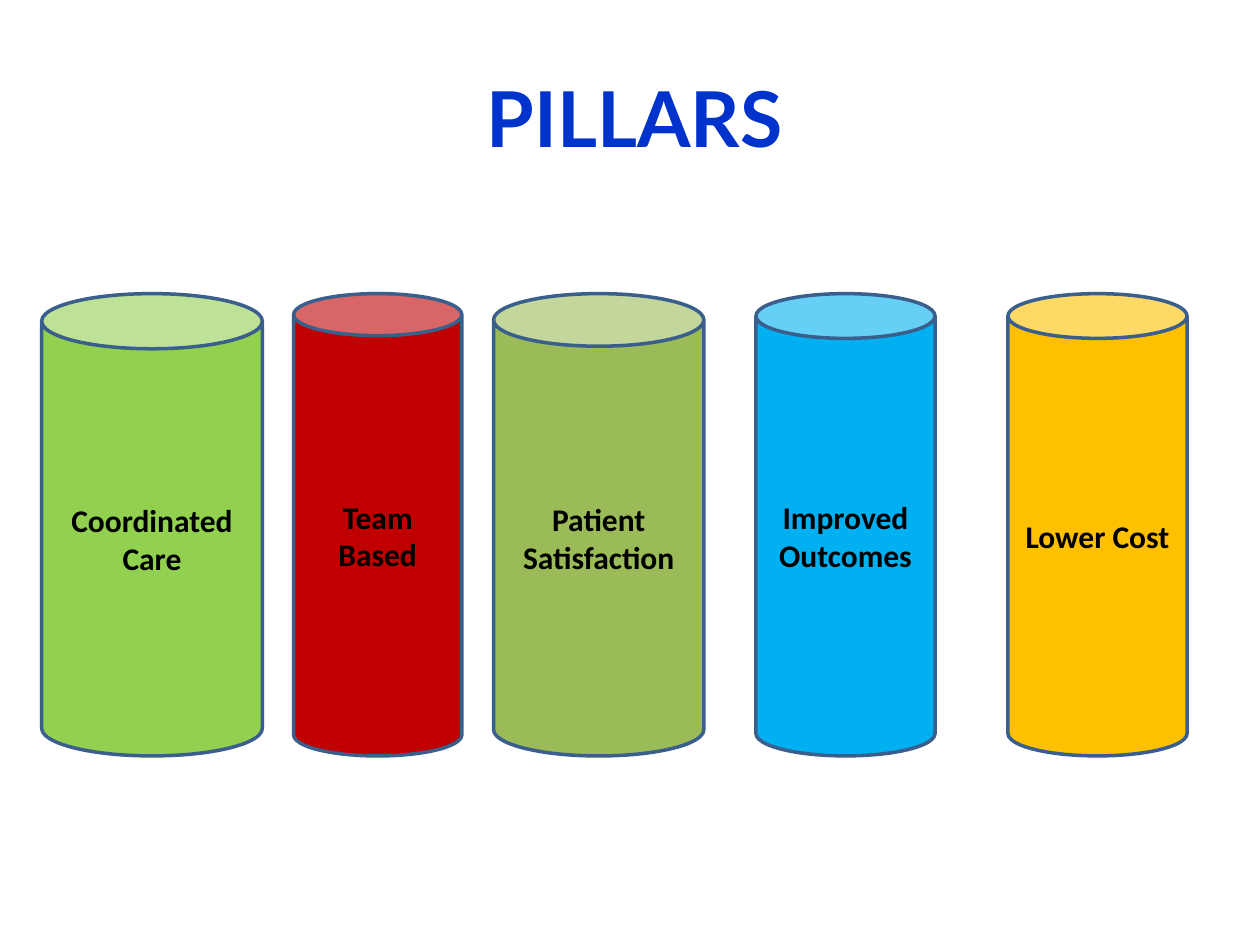
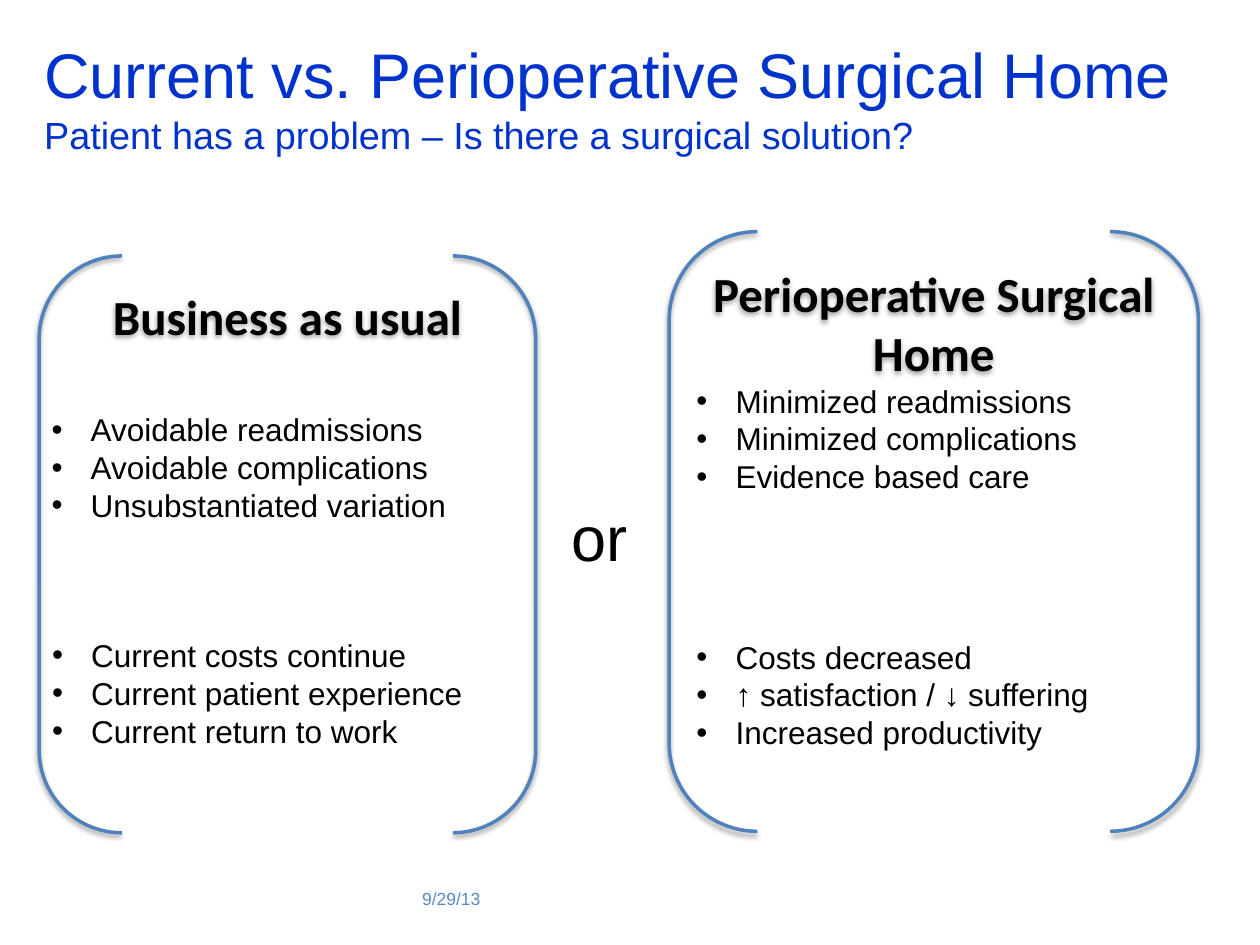
import pptx
import pptx.util
import pptx.dml.color
import pptx.enum.shapes
import pptx.enum.text
import pptx.oxml.ns
from dataclasses import dataclass
from lxml import etree

Cm = pptx.util.Cm
Pt = pptx.util.Pt
Align = pptx.enum.text.PP_ALIGN
Anchor = pptx.enum.text.MSO_ANCHOR
Preset = pptx.enum.shapes.MSO_SHAPE

PILLAR_TITLE = "PILLARS"
PILLAR_TOP, PILLAR_HEIGHT = 5.92, 9.32
PILLARS = [
    ("Coordinated Care", 0.84, 4.45, "92D050"),
    ("Team Based", 5.92, 3.39, "C00000"),
    ("Patient Satisfaction", 9.95, 4.24, "9BBB59"),
    ("Improved Outcomes", 15.24, 3.61, "00B0F0"),
    ("Lower Cost", 20.32, 3.61, "FFC000"),
]

COMPARISON_TITLE = "Current vs. Perioperative Surgical Home"
COMPARISON_SUBTITLE = "Patient has a problem – Is there a surgical solution?"
CHOICE_WORD = "or"
DATE = "9/29/13"
OPTIONS = [
    {
        "heading": "Business as usual",
        "bracket": (0.79, 5.16, 10.01, 11.63),
        "lists": [
            ((0.79, 8.15, 9.8, 2.57),
             ["Avoidable readmissions", "Avoidable complications", "Unsubstantiated variation"]),
            ((0.8, 12.7, 9.8, 2.57),
             ["Current costs continue", "Current patient experience", "Current return to work"]),
        ],
    },
    {
        "heading": "Perioperative Surgical Home",
        "bracket": (13.49, 4.67, 10.67, 12.09),
        "lists": [
            ((13.79, 7.57, 10.36, 2.57),
             ["Minimized readmissions", "Minimized complications", "Evidence based care"]),
            ((13.79, 12.73, 10.36, 2.57),
             ["Costs decreased", "↑ satisfaction / ↓ suffering", "Increased productivity"]),
        ],
    },
]


@dataclass(frozen=True)
class Theme:
    title: str = "0033CC"
    text: str = "000000"
    date: str = "5A87C5"
    pillar_line: str = "3A5F8C"
    bracket_line: str = "4F81BD"
    display_font: str = "Lato"
    shape_font: str = "Calibri"
    body_font: str = "Arial"
    pillar_title_size: float = 44
    title_size: float = 36
    subtitle_size: float = 21.6
    heading_size: float = 28
    body_size: float = 18
    date_size: float = 10
    line_width: float = 2


THEME = Theme()


def rgb(value):
    return pptx.dml.color.RGBColor.from_string(value)


def style(para, size, color, font, bold=False, align=Align.LEFT):
    para.alignment = align
    for span in para.runs:
        span.font.size = Pt(size)
        span.font.name = font
        span.font.bold = bold
        span.font.color.rgb = rgb(color)


def add_text(page, place, lines, anchor=Anchor.TOP, wrap=True):
    box = page.shapes.add_textbox(*map(Cm, place))
    frame = box.text_frame
    frame.word_wrap = wrap
    frame.vertical_anchor = anchor
    frame.text = "\n".join(lines)
    return frame.paragraphs


def add_outlined(page, preset, place, line, label, size, anchor):
    shape = page.shapes.add_shape(preset, *map(Cm, place))
    shape.shadow.inherit = False
    shape.line.color.rgb = rgb(line)
    shape.line.width = Pt(THEME.line_width)
    frame = shape.text_frame
    frame.word_wrap = True
    frame.vertical_anchor = anchor
    frame.text = label
    style(frame.paragraphs[0], size, THEME.text, THEME.shape_font, True, Align.CENTER)
    return shape


def add_soft_shadow(shape):
    qn = pptx.oxml.ns.qn
    effects = shape._element.spPr.find(qn("a:effectLst"))
    shadow = etree.SubElement(effects, qn("a:outerShdw"), blurRad=str(Pt(3.1)),
                              dist=str(Pt(1.6)), dir="5400000", rotWithShape="0")
    color = etree.SubElement(shadow, qn("a:srgbClr"), val="000000")
    etree.SubElement(color, qn("a:alpha"), val="38000")


def add_bullets(page, place, items):
    qn = pptx.oxml.ns.qn
    for para in add_text(page, place, items):
        properties = para._p.get_or_add_pPr()
        properties.set("marL", str(Cm(0.79)))
        properties.set("indent", str(-Cm(0.79)))
        etree.SubElement(properties, qn("a:buFont"), typeface=THEME.body_font)
        etree.SubElement(properties, qn("a:buChar"), char="•")
        style(para, THEME.body_size, THEME.text, THEME.body_font)


def build_pillars(page):
    title = add_text(page, (1.37, 0.76, 22.86, 3.18), [PILLAR_TITLE], Anchor.MIDDLE)[0]
    style(title, THEME.pillar_title_size, THEME.title, THEME.display_font, True, Align.CENTER)
    for label, left, width, color in PILLARS:
        pillar = add_outlined(page, Preset.CAN, (left, PILLAR_TOP, width, PILLAR_HEIGHT),
                              THEME.pillar_line, label, THEME.body_size, Anchor.MIDDLE)
        pillar.fill.solid()
        pillar.fill.fore_color.rgb = rgb(color)


def build_comparison(page):
    title, subtitle = add_text(page, (0.64, 0.6, 23.67, 2.6),
                               [COMPARISON_TITLE, COMPARISON_SUBTITLE])
    style(title, THEME.title_size, THEME.title, THEME.body_font)
    style(subtitle, THEME.subtitle_size, THEME.title, THEME.body_font)
    for option in OPTIONS:
        bracket = add_outlined(page, Preset.DOUBLE_BRACKET, option["bracket"],
                               THEME.bracket_line, option["heading"],
                               THEME.heading_size, Anchor.TOP)
        bracket.fill.background()
        add_soft_shadow(bracket)
        for place, items in option["lists"]:
            add_bullets(page, place, items)
    choice = add_text(page, (11.23, 9.93, 1.7, 1.8), [CHOICE_WORD], wrap=False)[0]
    style(choice, THEME.title_size, THEME.text, THEME.body_font, align=Align.CENTER)
    date = add_text(page, (8.26, 17.6, 4.24, 1.02), [DATE], Anchor.MIDDLE)[0]
    style(date, THEME.date_size, THEME.date, THEME.body_font)


def main():
    deck = pptx.Presentation()
    deck.slide_width, deck.slide_height = Cm(25.4), Cm(19.05)
    for build in (build_pillars, build_comparison):
        build(deck.slides.add_slide(deck.slide_layouts[6]))
    deck.save("out.pptx")


if __name__ == "__main__":
    main()
